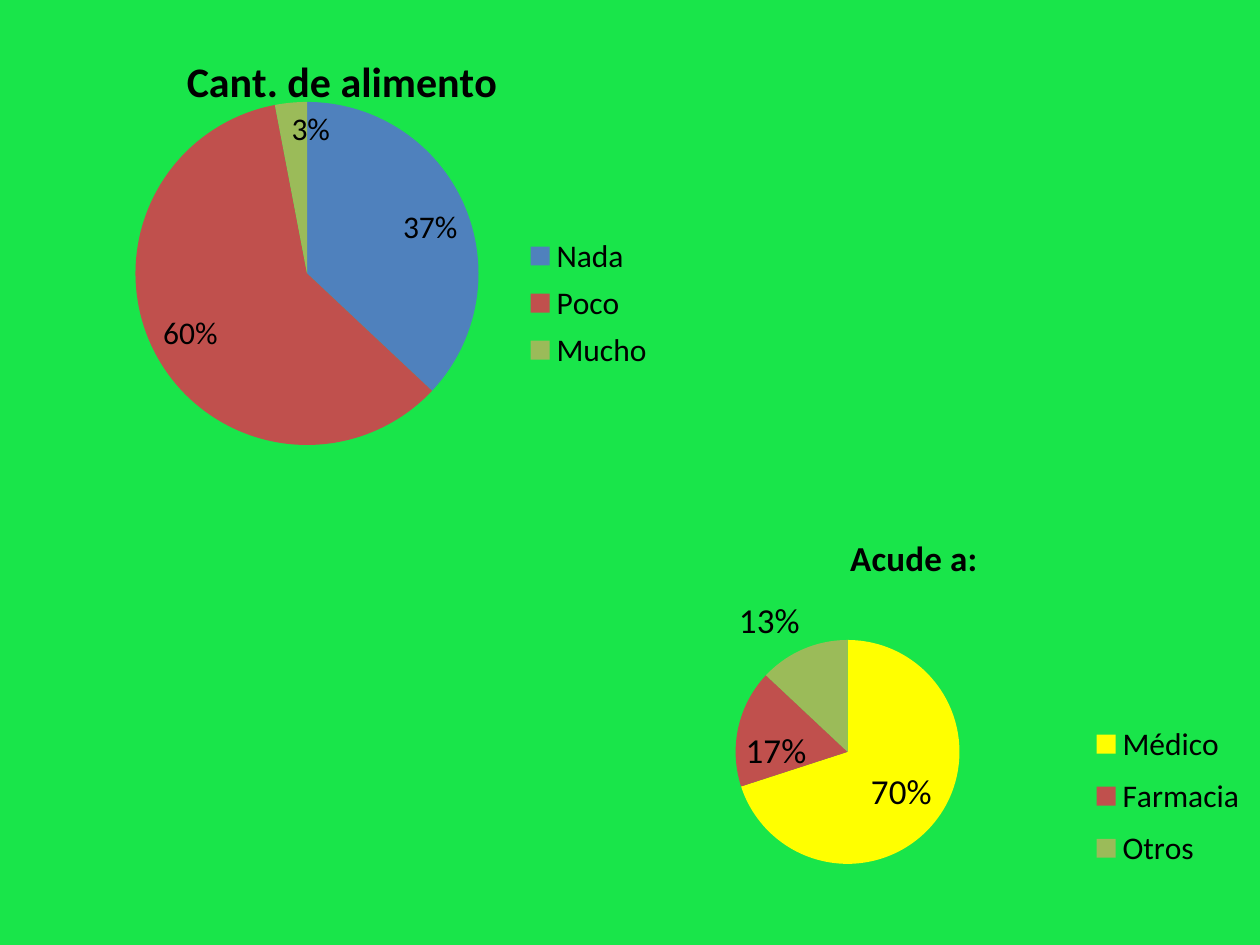
import pptx
import pptx.chart.data
import pptx.dml.color
import pptx.enum.chart
import pptx.oxml
import pptx.oxml.ns
import pptx.util
from dataclasses import dataclass

PX = 7257
PLACE = pptx.enum.chart.XL_LABEL_POSITION


@dataclass(frozen=True)
class Theme:
    font: str = "Calibri"
    back: str = "19E54A"
    ink: str = "000000"
    blue: str = "4F81BD"
    red: str = "C0504D"
    green: str = "9BBB59"
    yellow: str = "FFFF00"
    base: int = 10
    small: int = 18
    mid: int = 20
    large: int = 24


THEME = Theme()


def put(obj, **vals):
    for key, val in vals.items():
        setattr(obj, key, val)


def style(font, size, bold=False):
    put(font, name=THEME.font, size=pptx.util.Pt(size), bold=bold)
    font.color.rgb = pptx.dml.color.RGBColor.from_string(THEME.ink)


def paint(fill, color):
    fill.solid()
    fill.fore_color.rgb = pptx.dml.color.RGBColor.from_string(color)


def place(node, index, box, size, inner=False):
    for old in node.findall(pptx.oxml.ns.qn("c:layout")):
        node.remove(old)
    left, top, width, height = box
    parts = {"x": left / size[0], "y": top / size[1]}
    if width:
        parts.update(w=width / size[0], h=height / size[1])
    tags = '<c:layoutTarget val="inner"/>' if inner else ""
    tags += '<c:xMode val="edge"/><c:yMode val="edge"/>'
    tags += "".join(f'<c:{key} val="{val:.3f}"/>' for key, val in parts.items())
    space = pptx.oxml.ns.nsdecls("c")
    node.insert(index, pptx.oxml.parse_xml(
        f"<c:layout {space}><c:manualLayout>{tags}</c:manualLayout></c:layout>"))


def move_out(point, size):
    label = point.data_label
    style(label.font, size)
    label.position = PLACE.OUTSIDE_END
    node = label._dLbl
    for tag, val in {"c:showVal": "0", "c:showPercent": "1"}.items():
        node.find(pptx.oxml.ns.qn(tag)).set("val", val)


def draw_pie(slide, box, title, name, data, colors, sizes, spots, out=()):
    source = pptx.chart.data.CategoryChartData()
    source.categories = list(data)
    source.add_series(name, list(data.values()))
    chart = slide.shapes.add_chart(
        pptx.enum.chart.XL_CHART_TYPE.PIE, *(n * PX for n in box), source).chart
    style(chart.font, THEME.base)
    put(chart, has_title=True, has_legend=True)

    head = chart.chart_title
    head.include_in_layout = False
    head.text_frame.text = title
    style(head.text_frame.paragraphs[0].runs[0].font, sizes["title"], True)

    legend = chart.legend
    put(legend, position=pptx.enum.chart.XL_LEGEND_POSITION.RIGHT,
        include_in_layout=False)
    style(legend.font, THEME.small)

    plot = chart.plots[0]
    plot.vary_by_categories = True
    series = plot.series[0]
    for index, color in enumerate(colors):
        paint(series.points[index].format.fill, color)
    labels = series.data_labels
    put(labels, show_value=False, show_percentage=True, number_format="0%",
        number_format_is_linked=False, position=PLACE.INSIDE_END)
    style(labels.font, sizes["label"])
    for index in out:
        move_out(series.points[index], sizes["label"])

    size = box[2:]
    place(head._element, 1, spots["title"], size)
    place(legend._element, 1, spots["legend"], size)
    place(chart._chartSpace.chart.plotArea, 0, spots["plot"], size, True)


def draw_food(slide, box):
    draw_pie(
        slide, box, "Cant. de alimento", "Cant. de alimento",
        {"Nada": 37, "Poco": 60, "Mucho": 3},
        (THEME.blue, THEME.red, THEME.green),
        {"title": THEME.large, "label": THEME.small},
        {"title": (179, 29, 0, 0), "legend": (522, 212, 134, 150),
         "plot": (116, 86, 383, 343)})


def draw_care(slide, box):
    draw_pie(
        slide, box, "Acude a:", "Series 1",
        {"Médico": 70, "Farmacia": 17, "Otros": 13},
        (THEME.yellow, THEME.red, THEME.green),
        {"title": THEME.mid, "label": THEME.mid},
        {"title": (273, 28, 0, 0), "legend": (515, 212, 165, 170),
         "plot": (165, 141, 224, 224)},
        out=(2,))


def main():
    deck = pptx.Presentation()
    put(deck, slide_width=1260 * PX, slide_height=945 * PX)
    slide = deck.slides.add_slide(deck.slide_layouts[6])
    paint(slide.background.fill, THEME.back)
    draw_food(slide, (0, 16, 669, 441))
    draw_care(slide, (571, 499, 689, 442))
    deck.save("out.pptx")


if __name__ == "__main__":
    main()
